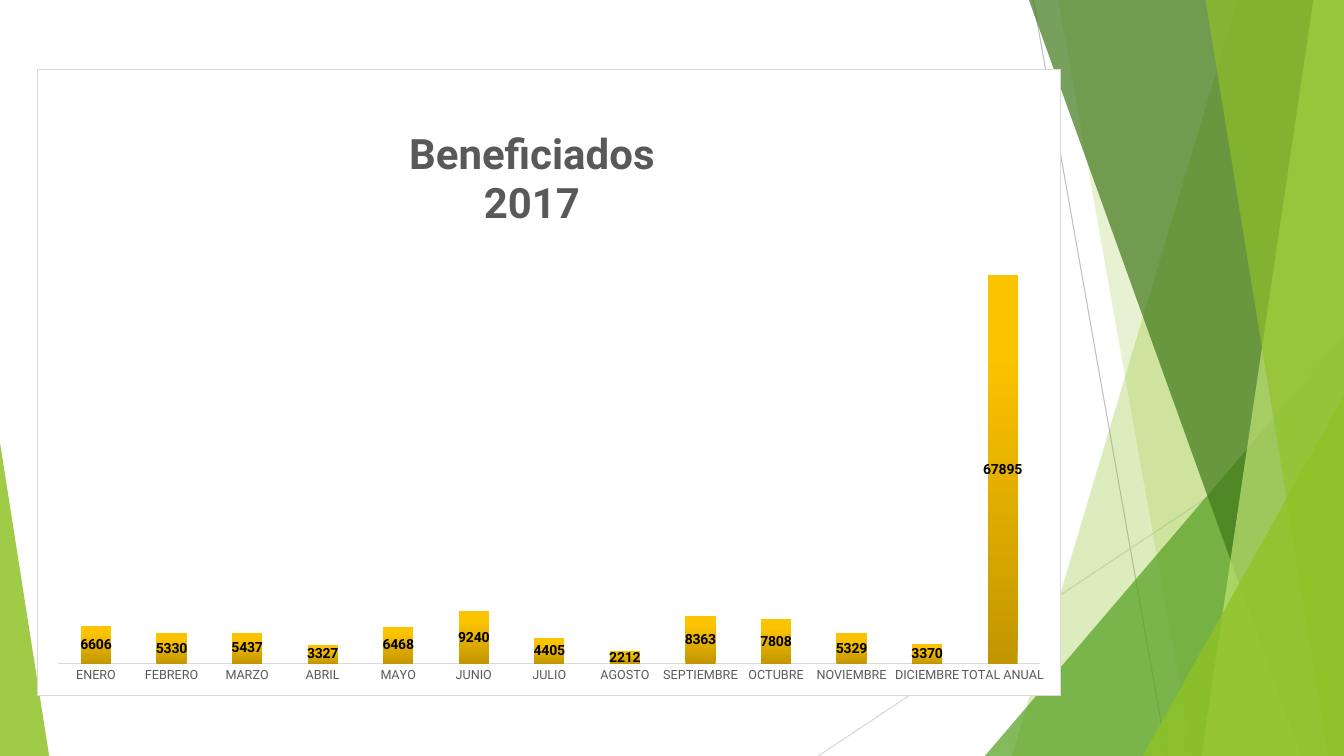
import pptx
import pptx.chart.data
import pptx.dml.color
import pptx.enum.chart
import pptx.enum.shapes
import pptx.oxml
import pptx.oxml.ns
import pptx.util

Cm = pptx.util.Cm
Pt = pptx.util.Pt
qn = pptx.oxml.ns.qn

SLIDE_W, SLIDE_H = 33.87, 19.05
FONT = "Roboto"
COLORS = {
    "white": "FFFFFF", "black": "000000", "text": "595959",
    "border": "D9D9D9", "steep_line": "BFBFBF",
    "lime": "90C226", "green": "54A021", "dark": "3F7819", "pale": "C0E474",
    "gold_dark": "C29600", "gold": "FCC300", "gold_light": "FDC400",
}
MONTHLY = {
    "ENERO": 6606, "FEBRERO": 5330, "MARZO": 5437, "ABRIL": 3327,
    "MAYO": 6468, "JUNIO": 9240, "JULIO": 4405, "AGOSTO": 2212,
    "SEPTIEMBRE": 8363, "OCTUBRE": 7808, "NOVIEMBRE": 5329,
    "DICIEMBRE": 3370, "TOTAL ANUAL": 67895,
}


def rgb(color):
    return pptx.dml.color.RGBColor.from_string(COLORS[color])


def xml(tag, content="", attrs=""):
    """Build an element whose content may use the a: and c: prefixes."""
    ns = pptx.oxml.ns.nsdecls("a", "c")
    return pptx.oxml.parse_xml(f"<{tag} {ns} {attrs}>{content}</{tag}>")


def solid(color):
    return f'<a:solidFill><a:srgbClr val="{COLORS[color]}"/></a:solidFill>'


def style_font(font, size, color, bold=False):
    font.name, font.size, font.bold = FONT, Pt(size), bold
    font.color.rgb = rgb(color)


def add_text(p, text, size=10, color="black", bold=False):
    r = p.add_run()
    r.text = text
    style_font(r.font, size, color, bold)


def paint(sp, color, opacity):
    """Fill a shape without outline; opacity is in percent."""
    sp.shadow.inherit = False
    sp.line.fill.background()
    sp.fill.solid()
    sp.fill.fore_color.rgb = rgb(color)
    clr = sp._element.spPr.find(qn("a:solidFill"))[0]
    clr.append(xml("a:alpha", attrs=f'val="{opacity * 1000}"'))


def add_line(s, x1, y1, x2, y2, color):
    line = s.shapes.add_connector(
        pptx.enum.shapes.MSO_CONNECTOR.STRAIGHT, Cm(x1), Cm(y1), Cm(x2), Cm(y2))
    line.line.color.rgb = rgb(color)
    line.line.width = Pt(0.75)
    line._element.spPr.append(xml("a:effectLst"))


def add_band(s, top_x, bottom_x, color, opacity):
    """Full-height band from a slanted left side to the right slide edge."""
    builder = s.shapes.build_freeform(Cm(top_x), 0)
    builder.add_line_segments([
        (Cm(SLIDE_W), 0), (Cm(SLIDE_W), Cm(SLIDE_H)), (Cm(bottom_x), Cm(SLIDE_H))])
    paint(builder.convert_to_shape(), color, opacity)


def add_corner(s, left, top, width, apex, color, opacity):
    """Triangle standing on the bottom slide edge."""
    sp = s.shapes.add_shape(
        pptx.enum.shapes.MSO_SHAPE.ISOSCELES_TRIANGLE,
        Cm(left), Cm(top), Cm(width), Cm(SLIDE_H - top))
    sp.adjustments[0] = apex
    paint(sp, color, opacity)


def set_layout(element, index, target="", **fractions):
    """Place a chart part by fractions of the chart area."""
    for old in element.findall(qn("c:layout")):
        element.remove(old)
    modes = "".join(f'<c:{k}Mode val="edge"/>' for k in "xy")
    values = "".join(f'<c:{k} val="{v}"/>' for k, v in fractions.items())
    manual = f"<c:manualLayout>{target}{modes}{values}</c:manualLayout>"
    element.insert(index, xml("c:layout", manual))


def add_title(chart):
    chart.has_title = True
    tf = chart.chart_title.text_frame
    add_text(tf.paragraphs[0], "Beneficiados", size=30, color="text", bold=True)
    add_text(tf.add_paragraph(), "2017", size=30, color="text", bold=True)
    set_layout(chart.chart_title._element, 1, x=0.36, y=0.09)


def style_axes(chart):
    months = chart.category_axis
    months.major_tick_mark = pptx.enum.chart.XL_TICK_MARK.NONE
    months.format.line.color.rgb = rgb("border")
    months.format.line.width = Pt(1)
    style_font(months.tick_labels.font, 9, "text")
    values = chart.value_axis
    values.minimum_scale, values.maximum_scale = 0, 70000
    values.has_major_gridlines = False
    values.visible = False


def style_bars(plot):
    plot.gap_width, plot.overlap = 150, 100
    plot.vary_by_categories = False
    stops = "".join(
        f'<a:gs pos="{pos * 1000}"><a:srgbClr val="{COLORS[color]}"/></a:gs>'
        for pos, color in ((0, "gold_dark"), (80, "gold"), (100, "gold_light")))
    bars = plot.series[0]
    bars.format.fill.background()
    sp_pr = bars._element.find(qn("c:spPr"))
    sp_pr.replace(sp_pr.find(qn("a:noFill")), xml(
        "a:gradFill", f'<a:gsLst>{stops}</a:gsLst><a:lin ang="16200000" scaled="0"/>'))
    labels = bars.data_labels
    labels.show_value = True
    labels.position = pptx.enum.chart.XL_LABEL_POSITION.CENTER
    style_font(labels.font, 10, "black", bold=True)


def add_monthly_chart(s):
    data = pptx.chart.data.CategoryChartData()
    data.categories = MONTHLY.keys()
    data.add_series("Beneficiados", MONTHLY.values())
    chart = s.shapes.add_chart(
        pptx.enum.chart.XL_CHART_TYPE.COLUMN_STACKED,
        Cm(0.94), Cm(1.73), Cm(25.81), Cm(15.8), data).chart
    chart.has_legend = False
    style_font(chart.font, 10, "black")
    add_title(chart)
    style_axes(chart)
    style_bars(chart.plots[0])
    area = chart._chartSpace.find(qn("c:chart"))
    set_layout(area.find(qn("c:plotArea")), 0, '<c:layoutTarget val="inner"/>',
               x=0.02, y=0.31, w=0.96, h=0.64)
    area.addnext(xml(
        "c:spPr", f'{solid("white")}<a:ln w="9525">{solid("border")}</a:ln>'))


def add_background(s):
    add_line(s, 26.04, 0, 29.41, SLIDE_H, "steep_line")
    add_line(s, SLIDE_W, 10.24, 20.62, SLIDE_H, "border")
    add_band(s, 31.19, 25.5, "lime", 30)
    add_band(s, 26.67, 30.05, "lime", 20)
    add_corner(s, 24.82, 8.46, SLIDE_W - 24.82, 1, "green", 72)
    add_band(s, 25.93, 32.79, "dark", 70)
    add_band(s, 33.1, 30.28, "pale", 70)
    add_band(s, 30.38, 33.48, "lime", 65)
    add_corner(s, 28.8, 9.98, SLIDE_W - 28.8, 1, "lime", 80)
    add_corner(s, 0, 11.15, 1.24, 0, "lime", 85)


def main():
    prs = pptx.Presentation()
    prs.slide_width, prs.slide_height = Cm(SLIDE_W), Cm(SLIDE_H)
    s = prs.slides.add_slide(prs.slide_layouts[6])
    add_background(s)
    add_monthly_chart(s)
    prs.save("out.pptx")


if __name__ == "__main__":
    main()
